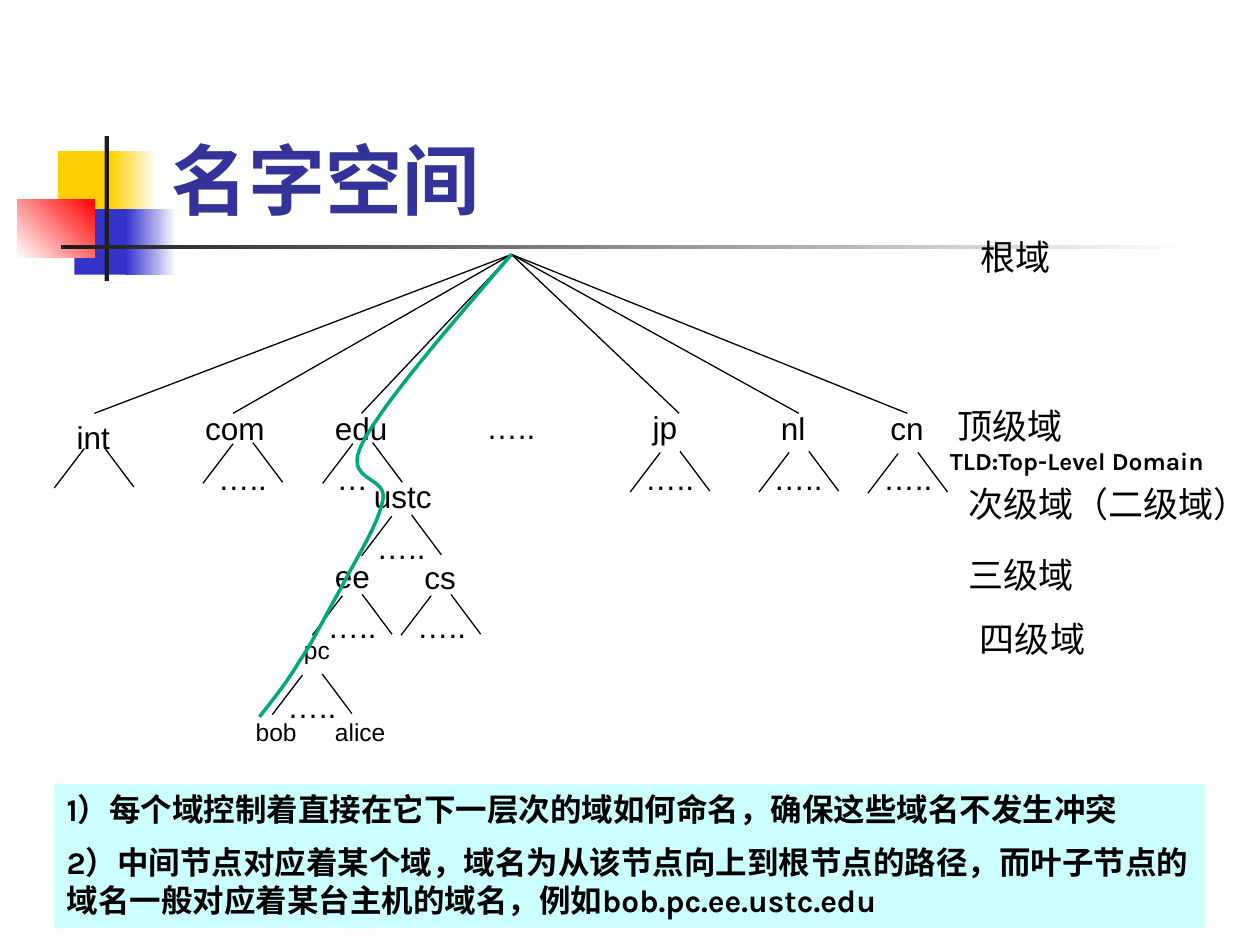
"""Draw the domain name space tree with its level names and notes."""
import dataclasses
from typing import Optional

import lxml.etree
import pptx
import pptx.dml.color
import pptx.enum.shapes
import pptx.enum.text
import pptx.oxml.ns
import pptx.util

Pt = pptx.util.Pt
RGBColor = pptx.dml.color.RGBColor
MSO_ANCHOR = pptx.enum.text.MSO_ANCHOR
PP_ALIGN = pptx.enum.text.PP_ALIGN

BLACK = RGBColor(0x00, 0x00, 0x00)
WHITE = RGBColor(0xFF, 0xFF, 0xFF)
YELLOW = RGBColor(0xFF, 0xCF, 0x01)
BLUE = RGBColor(0x33, 0x33, 0xCC)
RED = RGBColor(0xFF, 0x00, 0x00)
CHARCOAL = RGBColor(0x1C, 0x1C, 0x1C)
INDIGO = RGBColor(0x33, 0x33, 0x99)
PALE_CYAN = RGBColor(0xCC, 0xFF, 0xFF)
GREEN = RGBColor(0x00, 0xA9, 0x7C)


@dataclasses.dataclass(frozen=True)
class Block:
    left: float
    top: float
    width: float
    height: float
    color: RGBColor
    fade_to: Optional[RGBColor] = None
    angle: float = 0


@dataclasses.dataclass(frozen=True)
class Label:
    text: str
    left: float
    top: float
    width: float = 62.6
    height: float = 28.8
    size: float = 18
    font: str = "Arial"
    centered: bool = False
    bold: bool = False
    color: RGBColor = BLACK
    anchor: MSO_ANCHOR = MSO_ANCHOR.TOP


def dots(left: float, top: float, text: str = "…..") -> Label:
    return Label(text, left, top, 124.6, centered=True)


def level(text: str, left: float, top: float, width: float, centered: bool = True) -> Label:
    return Label(text, left, top, width, 31.5, 20, "Karla", centered)


ORNAMENT = [
    Block(33.1, 86.4, 34.6, 37.4, YELLOW),
    Block(63.4, 86.4, 25.9, 37.4, YELLOW, WHITE),
    Block(42.5, 119.5, 33.1, 37.4, BLUE),
    Block(72, 119.5, 28.8, 37.4, BLUE, WHITE),
    Block(10, 113.8, 44, 33.1, WHITE, RED, 45),
    Block(59.8, 77.8, 2.4, 82.8, CHARCOAL),
    Block(34.6, 140, 648, 2.5, CHARCOAL, WHITE),
]
TITLE = Label("名字空间", 90.7, 16.6, 613.4, 115.2, 44, "Karla",
              bold=True, color=INDIGO, anchor=MSO_ANCHOR.BOTTOM)
NOTE_BLOCK = Block(31, 447.8, 657.4, 82.8, PALE_CYAN)
NOTE = Label(
    "1）每个域控制着直接在它下一层次的域如何命名，确保这些域名不发生冲突\n"
    "2）中间节点对应着某个域，域名为从该节点向上到根节点的路径，而叶子节点的域名"
    "一般对应着某台主机的域名，例如bob.pc.ee.ustc.edu",
    31, 447.8, 657.4, 82.8, 18, "Karla", bold=True)

ROOT = (292.3, 145.4)
TOP_DOMAIN_Y = 236.2
TOP_DOMAIN_X = [54, 133.2, 206.6, 388.1, 456.5, 518.4]
FORKS = [
    (48.2, 256.3), (133.2, 253.6), (201.6, 253.6), (377.3, 258.6), (450.9, 258.6),
    (513.2, 259.2), (223.9, 295), (246.4, 340.4), (195.7, 340.4), (172.8, 385.8),
]
LABELS = [
    Label("int", 36.7, 235.4, 39.6),
    Label("com", 110.2, 230.4),
    Label("edu", 184.3, 230.4),
    Label("jp", 365.8, 229.7),
    Label("nl", 439.2, 230.4),
    Label("cn", 501.8, 230.4),
    Label("ustc", 206.6, 269.3),
    Label("ee", 184.3, 314.6),
    Label("cs", 235.4, 315.4),
    Label("pc", 161.3, 359.3, 39.6, 23.8, 14, centered=True),
    Label("bob", 139, 406.1, 39.6, 23.8, 14),
    Label("alice", 184.3, 406.1, 51.1, 23.8, 14),
    dots(229.7, 229.7),
    dots(76.3, 258.5),
    dots(139, 258.5, "…"),
    dots(320.4, 258.5),
    dots(393.8, 258.5),
    dots(456.5, 258.5),
    dots(167, 298.1),
    dots(139, 343.4),
    dots(190.1, 343.4),
    dots(115.9, 388.8),
    level("根域", 553, 131, 73.4, centered=False),
    level("次级域（二级域）", 541.4, 272.2, 184.3),
    level("三级域", 518.4, 312.5, 130.3),
    level("四级域", 524.9, 349.2, 130.3),
]
TOP_LEVEL = Label(" 顶级域\vTLD:Top-Level Domain", 535.7, 227.5, 178.6, 48.2, 20, "Karla")

ROUTE_START = (148.3, 409.7)
ROUTE_CURVES = [
    ((155.5, 400.3), (163.4, 391), (170.6, 378.7)),
    ((178.6, 367.2), (185.8, 352.1), (194.4, 337)),
    ((202.3, 321.1), (216.7, 299.5), (218.9, 285.1)),
    ((221, 271.4), (195.1, 275.8), (207.4, 252.7)),
    ((219.6, 229.7), (256.3, 187.2), ROOT),
]
CURVE_STEPS = 16


def add_block(page, block: Block):
    shape = page.shapes.add_shape(
        pptx.enum.shapes.MSO_SHAPE.RECTANGLE,
        Pt(block.left), Pt(block.top), Pt(block.width), Pt(block.height))
    shape.shadow.inherit = False
    shape.line.fill.background()
    if block.fade_to is None:
        shape.fill.solid()
        shape.fill.fore_color.rgb = block.color
    else:
        shape.fill.gradient()
        shape.fill.gradient_angle = block.angle
        for stop, color in zip(shape.fill.gradient_stops, (block.color, block.fade_to)):
            stop.color.rgb = color
    return shape


def write_label(box, label: Label) -> None:
    frame = box.text_frame
    frame.text = label.text
    frame.word_wrap = True
    frame.vertical_anchor = label.anchor
    for index, paragraph in enumerate(frame.paragraphs):
        paragraph.alignment = PP_ALIGN.CENTER if label.centered else PP_ALIGN.LEFT
        paragraph.space_before = Pt(9 if index else 0)
        for span in paragraph.runs:
            span.font.name = label.font
            span.font.size = Pt(label.size)
            span.font.bold = label.bold
            span.font.color.rgb = label.color


def add_label(page, label: Label):
    box = page.shapes.add_textbox(
        Pt(label.left), Pt(label.top), Pt(label.width), Pt(label.height))
    write_label(box, label)
    return box


def add_branch(page, start: tuple[float, float], end: tuple[float, float]) -> None:
    branch = page.shapes.add_connector(
        pptx.enum.shapes.MSO_CONNECTOR.STRAIGHT,
        Pt(start[0]), Pt(start[1]), Pt(end[0]), Pt(end[1]))
    branch.line.color.rgb = BLACK
    branch.line.width = Pt(0.75)
    lxml.etree.SubElement(branch._element.spPr, pptx.oxml.ns.qn("a:effectLst"))


def add_fork(page, x: float, y: float) -> None:
    add_branch(page, (x, y), (x - 17.2, y + 22.6))
    add_branch(page, (x + 11.3, y - 0.7), (x + 28.3, y + 22))


def curve_point(t: float, *controls: tuple[float, float]) -> tuple[int, int]:
    weights = ((1 - t) ** 3, 3 * t * (1 - t) ** 2, 3 * t * t * (1 - t), t ** 3)
    x, y = (sum(w * c for w, c in zip(weights, axis)) for axis in zip(*controls))
    return Pt(x), Pt(y)


def add_route(page) -> None:
    builder = page.shapes.build_freeform(Pt(ROUTE_START[0]), Pt(ROUTE_START[1]))
    start = ROUTE_START
    for curve in ROUTE_CURVES:
        builder.add_line_segments(
            [curve_point(step / CURVE_STEPS, start, *curve)
             for step in range(1, CURVE_STEPS + 1)], close=False)
        start = curve[-1]
    route = builder.convert_to_shape()
    route.shadow.inherit = False
    route.fill.background()
    route.line.color.rgb = GREEN
    route.line.width = Pt(2)


def main() -> None:
    deck = pptx.Presentation()
    deck.slide_width, deck.slide_height = Pt(720), Pt(540)
    page = deck.slides.add_slide(deck.slide_layouts[6])
    for block in ORNAMENT:
        add_block(page, block)
    add_label(page, TITLE)
    write_label(add_block(page, NOTE_BLOCK), NOTE)
    for x in TOP_DOMAIN_X:
        add_branch(page, ROOT, (x, TOP_DOMAIN_Y))
    for x, y in FORKS:
        add_fork(page, x, y)
    for label in LABELS:
        add_label(page, label)
    caption = add_label(page, TOP_LEVEL).text_frame.paragraphs[0].runs[-1]
    caption.font.size = Pt(14)
    caption.font.bold = True
    add_route(page)
    deck.save("out.pptx")


if __name__ == "__main__":
    main()
